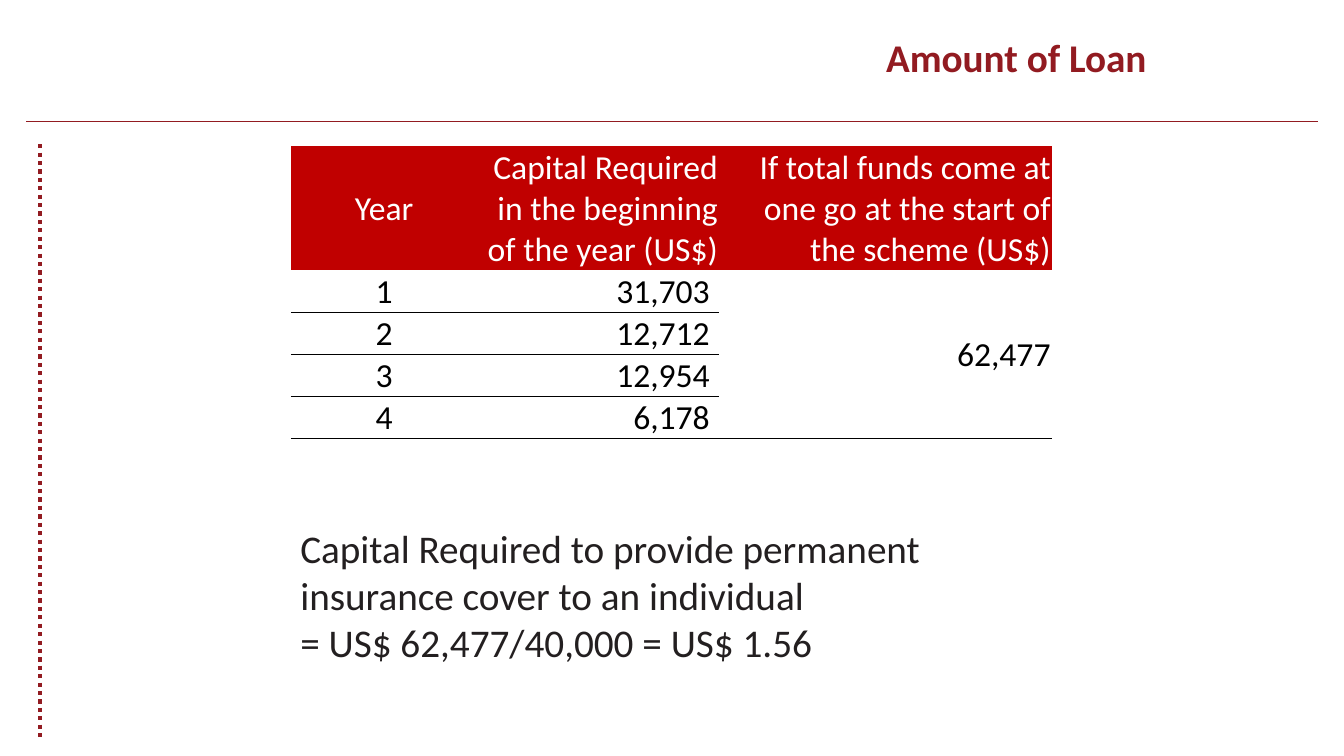
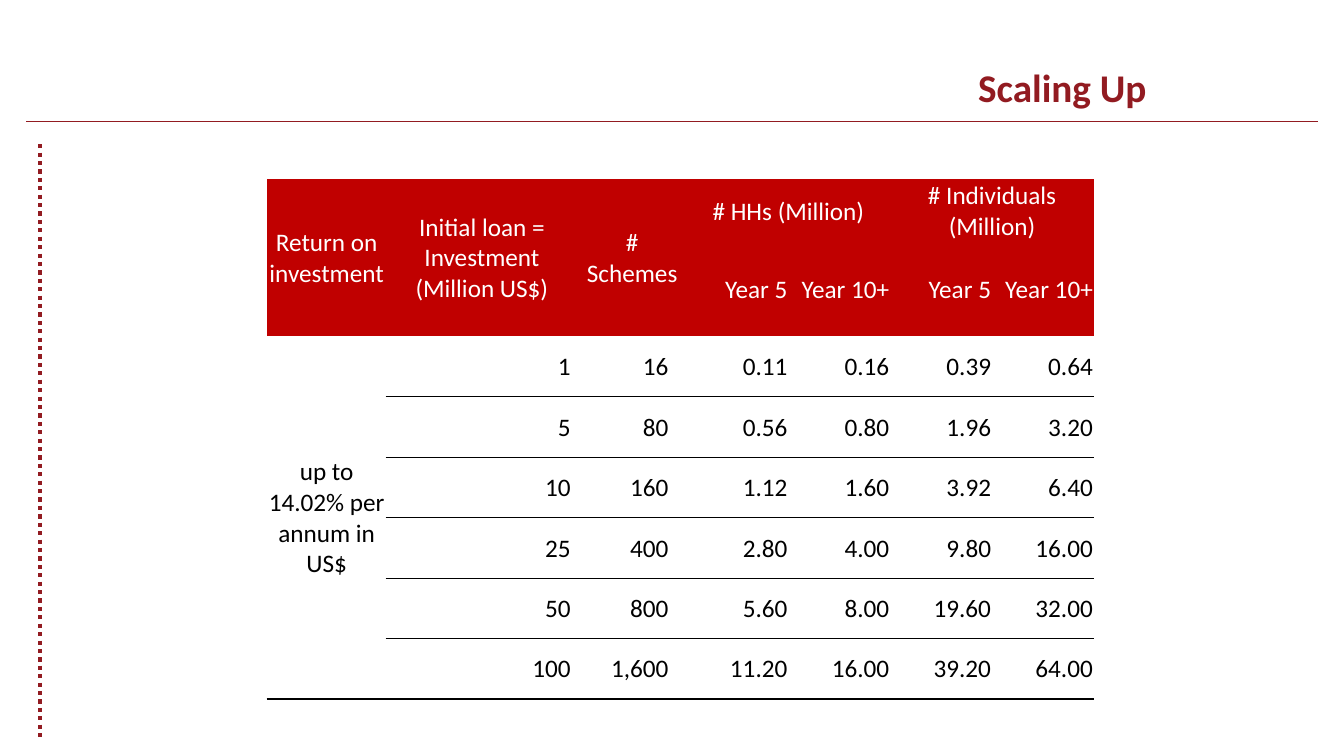
from lxml.etree import SubElement
from pptx import Presentation
from pptx.dml.color import RGBColor
from pptx.enum.dml import MSO_LINE
from pptx.enum.shapes import MSO_CONNECTOR
from pptx.enum.text import MSO_ANCHOR, MSO_AUTO_SIZE, PP_ALIGN
from pptx.oxml import parse_xml
from pptx.oxml.ns import nsdecls, qn
from pptx.util import Inches, Pt

COLORS = {"brand": "921B21", "header": "C00000", "white": "FFFFFF",
          "black": "000000", "ink": "231F20"}
FONT = "Calibri"
ALIGN = {"c": PP_ALIGN.CENTER, "r": PP_ALIGN.RIGHT, "l": PP_ALIGN.LEFT}
PLAIN_TABLE = "{2D5ABB26-0587-4C30-8999-92F81FD0307C}"


def rgb(name):
    """Return a palette colour."""
    return RGBColor.from_string(COLORS[name])


def style_text(tf, size, color, align="l", bold=False):
    """Format every run of a text frame."""
    for p in tf.paragraphs:
        p.alignment = ALIGN[align]
        for r in p.runs:
            r.font.name = FONT
            r.font.size = Pt(size)
            r.font.bold = bold
            r.font.color.rgb = rgb(color)


def add_rule(slide, start, end, width, dash=None):
    """Draw a straight line between two points."""
    line = slide.shapes.add_connector(
        MSO_CONNECTOR.STRAIGHT, *map(Inches, start + end))
    line.line.color.rgb = rgb("brand")
    line.line.width = Pt(width)
    if dash:
        line.line.dash_style = dash
    SubElement(line.element.spPr, qn("a:effectLst"))


def add_titled_slide(prs, title, box, anchor):
    """Add a slide with the shared rules and a right-aligned title."""
    slide = prs.slides.add_slide(prs.slide_layouts[5])
    add_rule(slide, (0.26, 1.21), (13.07, 1.21), 0.75)
    add_rule(slide, (0.4, 1.43), (0.4, 7.34), 3, MSO_LINE.ROUND_DOT)
    sp = slide.shapes.title
    sp.left, sp.top, sp.width, sp.height = map(Inches, box)
    tf = sp.text_frame
    tf.text = title
    tf.word_wrap = True
    tf.auto_size = MSO_AUTO_SIZE.NONE
    tf.vertical_anchor = anchor
    style_text(tf, 28, "brand", "r", True)
    return slide


def set_borders(cell, **sides):
    """Give a cell 1 pt borders, named by side in L, R, T, B order."""
    tcPr = cell._tc.get_or_add_tcPr()
    for i, (side, color) in enumerate(sides.items()):
        tcPr.insert(i, parse_xml(
            f'<a:ln{side} {nsdecls("a")} w="12700"><a:solidFill>'
            f'<a:srgbClr val="{COLORS[color]}"/></a:solidFill></a:ln{side}>'))


def add_data_table(slide, origin, widths, heights, rows, size, headers,
                   aligns, pads, merges):
    """Add a table with red header rows and ruled body rows."""
    shape = slide.shapes.add_table(
        len(rows), len(widths), *map(Inches, origin + (sum(widths), sum(heights))))
    table = shape.table
    table.first_row = table.horz_banding = False
    table._tbl.tblPr.find(qn("a:tableStyleId")).text = PLAIN_TABLE
    for column, width in zip(table.columns, widths):
        column.width = Inches(width)
    for row, height in zip(table.rows, heights):
        row.height = Inches(height)
    for first, last in merges:
        table.cell(*first).merge(table.cell(*last))

    for i, values in enumerate(rows):
        is_header = i < len(headers)
        row_aligns = headers[i] if is_header else aligns
        for j, value in enumerate(values):
            cell = table.cell(i, j)
            cell.margin_left = cell.margin_top = Inches(0.01)
            cell.margin_right = Inches(0.01 if is_header else pads[j])
            cell.margin_bottom = 0
            cell.vertical_anchor = MSO_ANCHOR.MIDDLE
            if is_header:
                cell.fill.solid()
                cell.fill.fore_color.rgb = rgb("header")
            else:
                cell.fill.background()
                if not cell.is_spanned or i == len(rows) - 1:
                    set_borders(cell, L="white", R="white", B="black")
            if value:
                cell.text_frame.text = value
                style_text(cell.text_frame, size,
                           "white" if is_header else "black", row_aligns[j])


def add_note(slide, box, lines):
    """Add a text box with one paragraph per line."""
    tf = slide.shapes.add_textbox(*map(Inches, box)).text_frame
    tf.word_wrap = True
    tf.text = "\n".join(lines)
    style_text(tf, 28, "ink")


def build_loan(prs):
    """Build the loan amount slide."""
    slide = add_titled_slide(prs, "Amount of Loan", (4.23, 0.28, 7.24, 0.94),
                             MSO_ANCHOR.TOP)
    rows = [
        ("Year", "Capital Required in the beginning of the year (US$)",
         "If total funds come at one go at the start of the scheme (US$)"),
        ("1", "31,703", "62,477"),
        ("2", "12,712", ""),
        ("3", "12,954", ""),
        ("4", "6,178", ""),
    ]
    add_data_table(slide, (2.89, 1.45), (1.84, 2.4, 3.3), [1.21] + [0.41] * 4,
                   rows, 24, headers=["crr"], aligns="crr",
                   pads=(0.01, 0.09, 0.01), merges=[((1, 2), (4, 2))])
    add_note(slide, (2.88, 5.15, 7.65, 1.51), (
        "Capital Required to provide permanent insurance cover to an individual",
        "= US$ 62,477/40,000 = US$ 1.56"))


def build_scaling(prs):
    """Build the scaling up slide."""
    slide = add_titled_slide(prs, "Scaling Up", (5.17, 0.21, 6.3, 0.94),
                             MSO_ANCHOR.BOTTOM)
    rows = [
        ("Return on investment", "Initial loan = Investment (Million US$)",
         "# Schemes", "# HHs (Million)", "", "# Individuals (Million)", ""),
        ("", "", "", "Year 5", "Year 10+", "Year 5", "Year 10+"),
        ("up to 14.02% per annum in US$",
         "1", "16", "0.11", "0.16", "0.39", "0.64"),
        ("", "5", "80", "0.56", "0.80", "1.96", "3.20"),
        ("", "10", "160", "1.12", "1.60", "3.92", "6.40"),
        ("", "25", "400", "2.80", "4.00", "9.80", "16.00"),
        ("", "50", "800", "5.60", "8.00", "19.60", "32.00"),
        ("", "100", "1,600", "11.20", "16.00", "39.20", "64.00"),
    ]
    merges = [((0, j), (1, j)) for j in range(3)]
    merges += [((0, j), (0, j + 1)) for j in (3, 5)]
    merges.append(((2, 0), (7, 0)))
    add_data_table(slide, (2.65, 1.78), [1.18, 1.9, 1.08] + [1.01] * 4,
                   [0.63, 0.92] + [0.6] * 6, rows, 18,
                   headers=["ccccccc", "cccrrrr"], aligns="crrrrrr",
                   pads=[0.01, 0.07, 0.18] + [0.01] * 4, merges=merges)


def main():
    """Build and save the presentation."""
    prs = Presentation()
    prs.slide_width, prs.slide_height = Inches(13.33), Inches(7.5)
    build_loan(prs)
    build_scaling(prs)
    prs.save("out.pptx")


if __name__ == "__main__":
    main()
